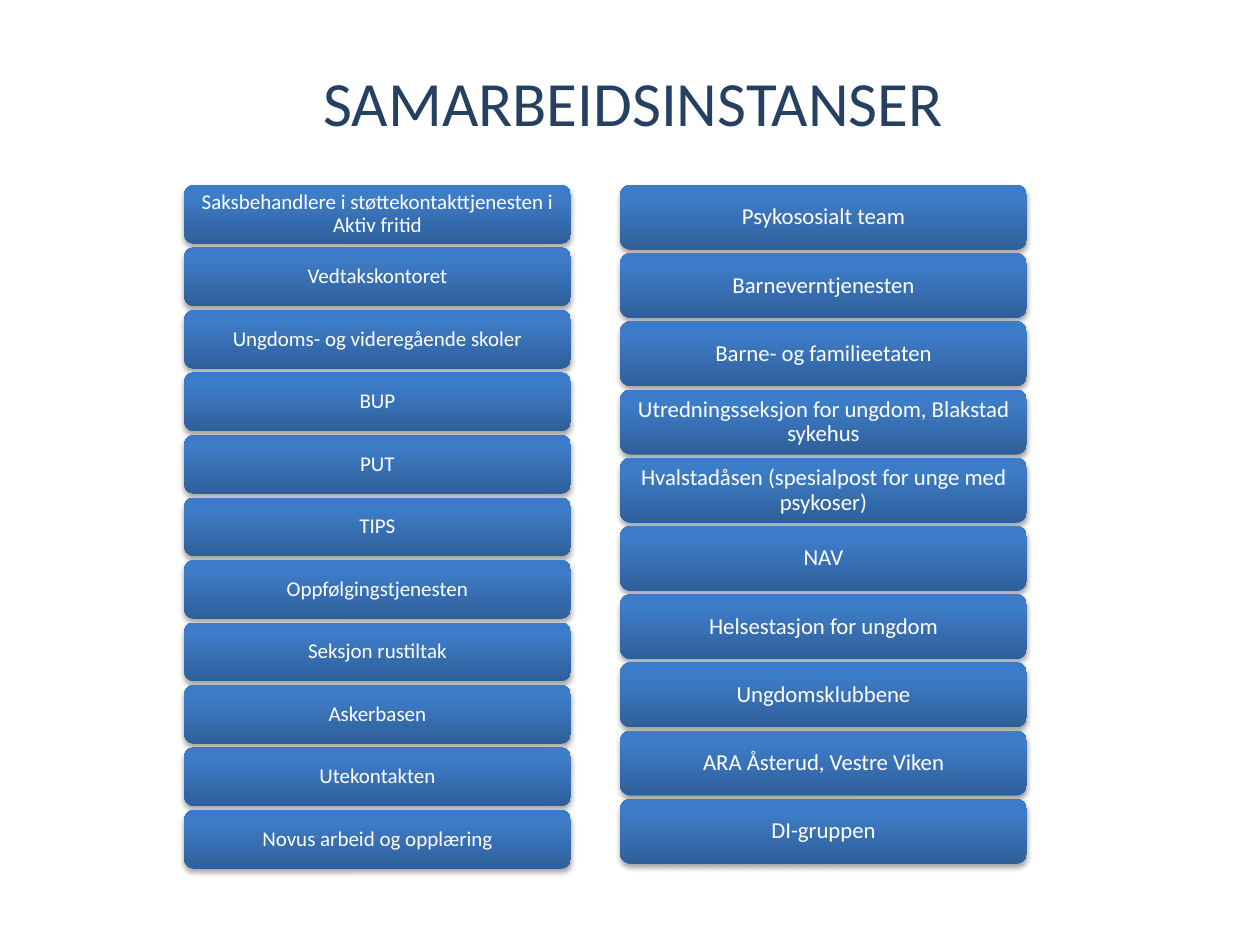
"""Build the slide listing cooperating agencies in two stacks of boxes."""
from dataclasses import dataclass

from lxml import etree
from pptx import Presentation
from pptx import util as u
from pptx.dml.color import RGBColor
from pptx.enum import shapes, text
from pptx.oxml import ns

PX = 914400 // 126
FONT = "Calibri"
COLORS = {
    "title": "254061",
    "label": "FFFFFF",
    "bottom": "2F5F99",
    "middle": "3D7CC7",
    "top": "3A7CCB",
    "shadow": "000000",
}
GRADIENT = (("bottom", 0), ("middle", 80), ("top", 100))


@dataclass(frozen=True)
class Stack:
    left: int
    top: int
    width: int
    box_height: int
    travel: int
    font_size: int
    labels: tuple[str, ...]


STACKS = (
    Stack(184, 185, 387, 59, 625, 12, (
        "Saksbehandlere i støttekontakttjenesten i Aktiv fritid",
        "Vedtakskontoret",
        "Ungdoms- og videregående skoler",
        "BUP",
        "PUT",
        "TIPS",
        "Oppfølgingstjenesten",
        "Seksjon rustiltak",
        "Askerbasen",
        "Utekontakten",
        "Novus arbeid og opplæring",
    )),
    Stack(620, 185, 407, 65, 614, 13, (
        "Psykososialt team",
        "Barneverntjenesten",
        "Barne- og familieetaten",
        "Utredningsseksjon for ungdom, Blakstad sykehus",
        "Hvalstadåsen (spesialpost for unge med psykoser)",
        "NAV",
        "Helsestasjon for ungdom",
        "Ungdomsklubbene",
        "ARA Åsterud, Vestre Viken",
        "DI-gruppen",
    )),
)


def px(length: float) -> int:
    return round(length * PX)


def add_child(parent, tag: str, **attributes):
    values = {name: str(value) for name, value in attributes.items()}
    return etree.SubElement(parent, ns.qn(tag), values)


def write_text(shape, content: str, size: int, color: str) -> None:
    frame = shape.text_frame
    frame.text = content
    frame.word_wrap = True
    frame.vertical_anchor = text.MSO_ANCHOR.MIDDLE
    paragraph = frame.paragraphs[0]
    paragraph.alignment = text.PP_ALIGN.CENTER
    font = paragraph.runs[0].font
    font.name = FONT
    font.size = u.Pt(size)
    font.color.rgb = RGBColor.from_string(COLORS[color])


def style_box(shape) -> None:
    shape.line.fill.background()
    shape.shadow.inherit = False
    properties = shape._element.spPr
    gradient = add_child(properties, "a:gradFill", rotWithShape=1)
    stops = add_child(gradient, "a:gsLst")
    for color, position in GRADIENT:
        stop = add_child(stops, "a:gs", pos=position * 1000)
        add_child(stop, "a:srgbClr", val=COLORS[color])
    add_child(gradient, "a:lin", ang=270 * 60000, scaled=0)
    properties.find(ns.qn("a:ln")).addprevious(gradient)
    shadow = add_child(
        properties.find(ns.qn("a:effectLst")), "a:outerShdw",
        blurRad=u.Pt(3.1), dist=u.Pt(1.8), dir=90 * 60000, rotWithShape=0)
    tint = add_child(shadow, "a:srgbClr", val=COLORS["shadow"])
    add_child(tint, "a:alpha", val=35000)


def add_stack(slide, stack: Stack) -> None:
    pitch = stack.travel / (len(stack.labels) - 1)
    for row, label in enumerate(stack.labels):
        box = slide.shapes.add_shape(
            shapes.MSO_SHAPE.ROUNDED_RECTANGLE,
            px(stack.left), px(stack.top + row * pitch),
            px(stack.width), px(stack.box_height))
        style_box(box)
        write_text(box, label, stack.font_size, "label")
        frame = box.text_frame
        frame.margin_left = frame.margin_right = px(9)
        frame.margin_top = frame.margin_bottom = px(6)
        frame.paragraphs[0].line_spacing = 0.9


def main() -> None:
    presentation = Presentation()
    presentation.slide_width = px(1260)
    presentation.slide_height = px(945)
    slide = presentation.slides.add_slide(presentation.slide_layouts[6])
    title = slide.shapes.add_textbox(px(134), px(55), px(999), px(92))
    write_text(title, "SAMARBEIDSINSTANSER", 36, "title")
    for stack in STACKS:
        add_stack(slide, stack)
    presentation.save("out.pptx")


if __name__ == "__main__":
    main()
